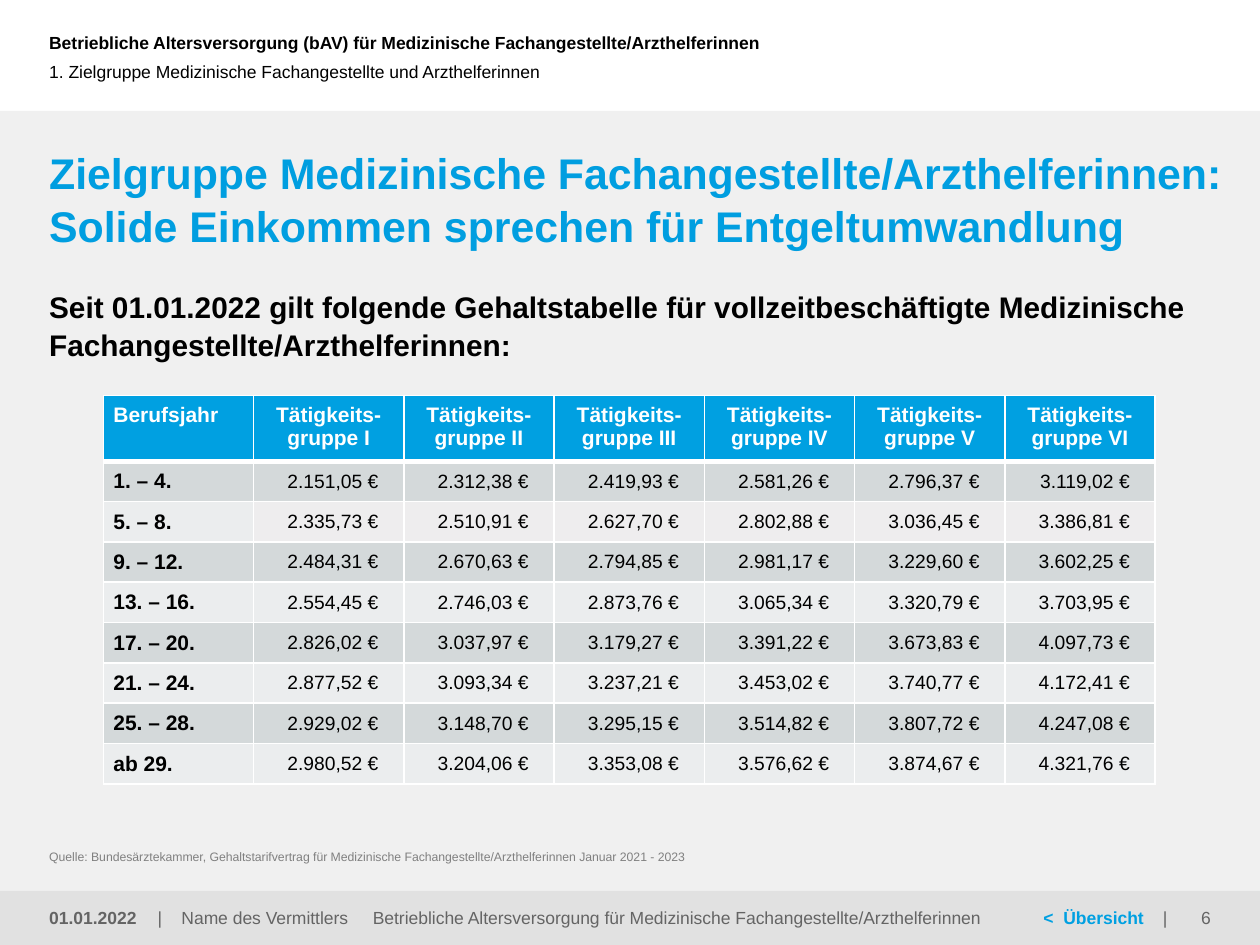
from dataclasses import dataclass

from lxml import etree
from pptx import Presentation
from pptx.dml.color import RGBColor
from pptx.enum.shapes import MSO_SHAPE
from pptx.enum.text import MSO_ANCHOR, PP_ALIGN
from pptx.oxml.ns import qn
from pptx.util import Inches, Pt

RECT = MSO_SHAPE.RECTANGLE
TOP, MID, BASE = MSO_ANCHOR.TOP, MSO_ANCHOR.MIDDLE, MSO_ANCHOR.BOTTOM
LEFT, MIDST, RIGHT = PP_ALIGN.LEFT, PP_ALIGN.CENTER, PP_ALIGN.RIGHT

WIDE, HIGH = Inches(10), Inches(7.5)
EDGE = 3.9            # left text edge, percent of width
FOOT, BAR = 94.27, 5.73  # footer top and height, percent of height
FLAT = (0, 0, 0, 0)   # insets: left, top, right, bottom, in inches
INSET = (0.39, 0.05, 0.1, 0.05)


@dataclass(frozen=True)
class Theme:
    font: str = "Arial"
    white: str = "FFFFFF"
    black: str = "000000"
    panel: str = "F0F0F0"
    bar: str = "E1E1E1"
    blue: str = "00A0E1"
    head: str = "009EE0"
    grey: str = "646464"
    pale: str = "808080"
    dark: str = "D4D9DA"
    light: str = "EBEDEE"
    tint: str = "EEEDEE"
    title: float = 24.5
    lead: float = 17
    label: float = 12
    value: float = 11
    small: float = 10
    note: float = 7


THEME = Theme()

GROUPS = ["I", "II", "III", "IV", "V", "VI"]
YEARS = ["1. – 4.", "5. – 8.", "9. – 12.", "13. – 16.",
         "17. – 20.", "21. – 24.", "25. – 28.", "ab 29."]
WAGES = """
2.151,05 2.312,38 2.419,93 2.581,26 2.796,37 3.119,02
2.335,73 2.510,91 2.627,70 2.802,88 3.036,45 3.386,81
2.484,31 2.670,63 2.794,85 2.981,17 3.229,60 3.602,25
2.554,45 2.746,03 2.873,76 3.065,34 3.320,79 3.703,95
2.826,02 3.037,97 3.179,27 3.391,22 3.673,83 4.097,73
2.877,52 3.093,34 3.237,21 3.453,02 3.740,77 4.172,41
2.929,02 3.148,70 3.295,15 3.514,82 3.807,72 4.247,08
2.980,52 3.204,06 3.353,08 3.576,62 3.874,67 4.321,76
"""


def share(left, top, width, height):
    """Turn percentages of the slide into lengths."""
    return [int(part * full / 100) for part, full in
            zip((left, top, width, height), (WIDE, HIGH, WIDE, HIGH))]


def pad(target, inset):
    for side, size in zip(("left", "top", "right", "bottom"), inset):
        setattr(target, "margin_" + side, Inches(size))


def style(run, size, color, bold=False):
    looks = {"name": THEME.font, "size": Pt(size), "bold": bold}
    for key, value in looks.items():
        setattr(run.font, key, value)
    run.font.color.rgb = RGBColor.from_string(color)


def stops(para, places):
    """Add tab stops, given in inches from the text edge."""
    tabs = etree.SubElement(para._p.get_or_add_pPr(), qn("a:tabLst"))
    for place in places:
        etree.SubElement(tabs, qn("a:tab"), pos=str(Inches(place)), algn="l")


def band(slide, box, color):
    shape = slide.shapes.add_shape(RECT, *share(*box))
    shape.shadow.inherit = False
    shape.fill.solid()
    shape.fill.fore_color.rgb = RGBColor.from_string(color)
    shape.line.fill.background()


def text(slide, box, parts, inset=FLAT, anchor=MID, align=LEFT,
         tabs=(), pitch=None):
    """Add a text box; each part is (wording, size, colour, bold)."""
    frame = slide.shapes.add_textbox(*share(*box)).text_frame
    frame.word_wrap = True
    frame.vertical_anchor = anchor
    pad(frame, inset)
    para = frame.paragraphs[0]
    para.alignment = align
    if pitch:
        para.line_spacing = pitch
    if tabs:
        stops(para, tabs)
    for words, *look in parts:
        for row, line in enumerate(words.split("\n")):
            if row:
                para.add_line_break()
            run = para.add_run()
            run.text = line
            style(run, *look)


def frame_cell(cell, widths):
    """Draw white cell borders; widths are in points by side."""
    props = cell._tc.get_or_add_tcPr()
    for side, width in widths.items():
        line = etree.SubElement(props, qn("a:ln" + side), w=str(Pt(width)))
        fill = etree.SubElement(line, qn("a:solidFill"))
        etree.SubElement(fill, qn("a:srgbClr"), val=THEME.white)


def fill_cell(cell, words, look, align, anchor, inset, color, widths):
    frame_cell(cell, widths)
    cell.fill.solid()
    cell.fill.fore_color.rgb = RGBColor.from_string(color)
    cell.vertical_anchor = anchor
    pad(cell, inset)
    para = cell.text_frame.paragraphs[0]
    para.alignment = align
    run = para.add_run()
    run.text = words
    style(run, *look)


def wage_table(slide):
    wages = [line.split() for line in WAGES.split("\n") if line]
    rows = [["Berufsjahr"] + [f"Tätigkeits-gruppe {name}" for name in GROUPS]]
    rows += [[year] + [f"{wage} €" for wage in line]
             for year, line in zip(YEARS, wages)]
    box = share(8.2, 41.87, 83.5, 40.85)
    table = slide.shapes.add_table(len(rows), len(rows[0]), *box).table
    for col in table.columns:
        col.width = box[2] // len(rows[0])
    for r, line in enumerate(rows):
        table.rows[r].height = int(HIGH * (0.0424 if r else 0.0693))
        widths = {"L": 1, "R": 1, "T": 3 if r == 1 else 1, "B": 1 if r else 3}
        for c, words in enumerate(line):
            look = (THEME.label, THEME.black if r else THEME.white, True)
            align, inset = LEFT, (0.08, 0.06, 0.08, 0.06)
            color = (THEME.dark if r % 2 else THEME.light) if r else THEME.blue
            if c and not r:
                align = MIDST
            elif c:
                look = (THEME.value, THEME.black)
                align, inset = RIGHT, (0.06, 0.06, 0.2, 0.06)
                if r == 2:
                    color = THEME.tint
            fill_cell(table.cell(r, c), words, look, align,
                      MID if r else TOP, inset, color, widths)


def header(slide):
    text(slide, (0, 0, 69.8, 8.93),
         [("Betriebliche Altersversorgung (bAV) für Medizinische "
           "Fachangestellte/Arzthelferinnen", THEME.small, THEME.black, True)],
         INSET)
    text(slide, (0, 3.33, 71.5, 8.4),
         [("1. Zielgruppe Medizinische Fachangestellte und Arzthelferinnen",
           THEME.small, THEME.black)], (0.39, 0, 0, 0))


def body(slide):
    text(slide, (EDGE, 15.2, 93.5, 7.33),
         [("Zielgruppe Medizinische Fachangestellte/Arzthelferinnen:\n"
           "Solide Einkommen sprechen für Entgeltumwandlung",
           THEME.title, THEME.head, True)], anchor=TOP, pitch=1.05)
    text(slide, (EDGE, 30.4, 92.2, 7.6),
         [("Seit 01.01.2022 gilt folgende Gehaltstabelle für "
           "vollzeitbeschäftigte Medizinische Fachangestellte/"
           "Arzthelferinnen:", THEME.lead, THEME.black, True)],
         anchor=TOP, pitch=1.05)
    wage_table(slide)
    text(slide, (EDGE, 89.87, 92.1, 1.6),
         [("Quelle: Bundesärztekammer, Gehaltstarifvertrag für Medizinische "
           "Fachangestellte/Arzthelferinnen Januar 2021 - 2023",
           THEME.note, THEME.pale)], anchor=BASE)


def footer(slide):
    plain = (THEME.small, THEME.grey)
    text(slide, (0, FOOT, 12.2, BAR), [("01.01.2022", *plain, True)], INSET)
    text(slide, (12.5, FOOT, 24.2, BAR),
         [("|\tName des Vermittlers", *plain)], tabs=[0.19])
    text(slide, (27.7, FOOT, 52, BAR),
         [("Betriebliche Altersversorgung für Medizinische "
           "Fachangestellte/Arzthelferinnen", *plain)], align=MIDST)
    text(slide, (68.8, FOOT, 24.2, BAR),
         [("<\tÜbersicht", THEME.small, THEME.blue, True), ("\t|", *plain)],
         (1.4, 0, 0, 0), tabs=[0.16, 0.95])
    text(slide, (90.6, FOOT, 9.4, BAR), [("6", *plain)],
         (0.1, 0.05, 0.39, 0.05), align=RIGHT)


def main():
    deck = Presentation()
    deck.slide_width, deck.slide_height = WIDE, HIGH
    slide = deck.slides.add_slide(deck.slide_layouts[6])
    # Background bands
    band(slide, (0, 11.73, 100, 88.27), THEME.panel)
    band(slide, (0, FOOT, 100, BAR), THEME.bar)
    # Content from top to bottom
    header(slide)
    body(slide)
    footer(slide)
    deck.save("out.pptx")


if __name__ == "__main__":
    main()
